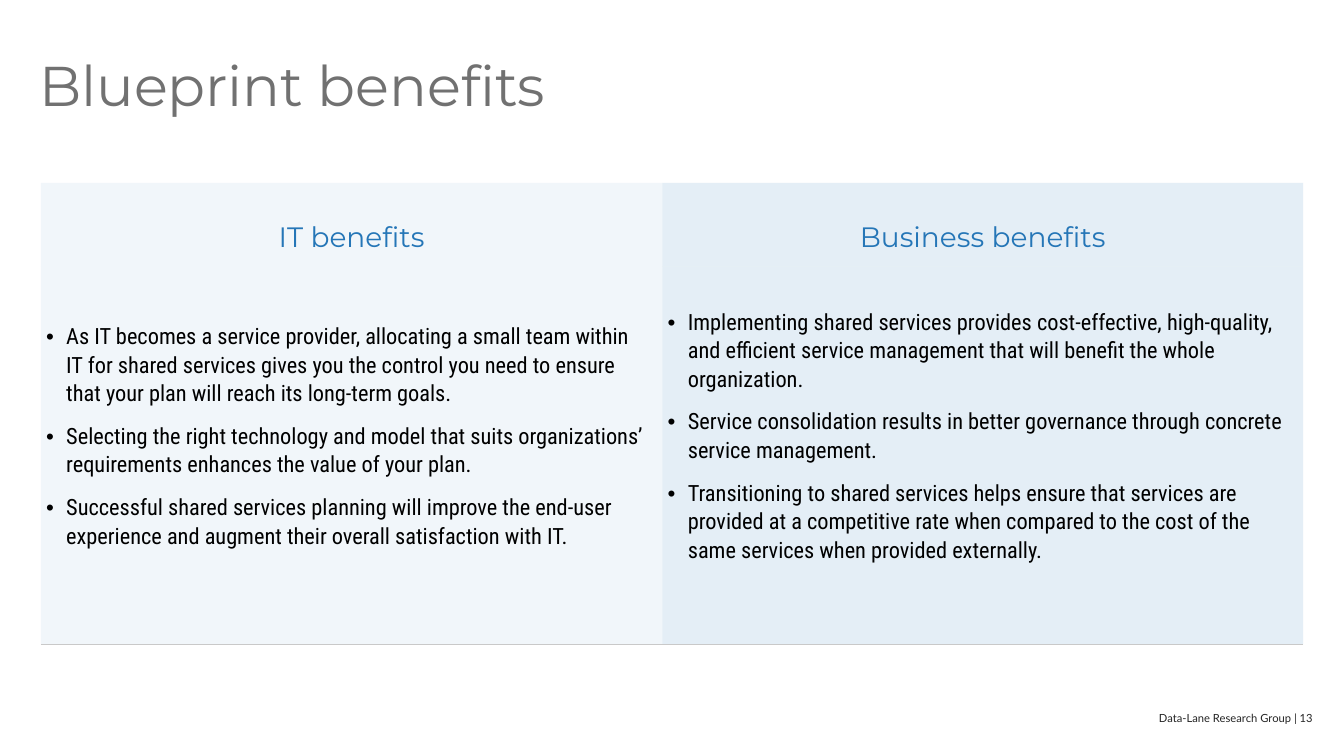
from lxml import etree
from pptx import Presentation
from pptx import util as u
from pptx.dml import color
from pptx.enum import text
from pptx.oxml import ns

TINT = "7CADD4"
COLUMNS = [
    ("IT benefits", 15.67, 10, [
        "As IT becomes a service provider, allocating a small team within IT for shared services gives you the control you need to ensure that your plan will reach its long-term goals.",
        "Selecting the right technology and model that suits organizations’ requirements enhances the value of your plan.",
        "Successful shared services planning will improve the end-user experience and augment their overall satisfaction with IT.",
    ]),
    ("Business benefits", 16.15, 20, [
        "Implementing shared services provides cost-effective, high-quality, and efficient service management that will benefit the whole organization.",
        "Service consolidation results in better governance through concrete service management.",
        "Transitioning to shared services helps ensure that services are provided at a competitive rate when compared to the cost of the same services when provided externally.",
    ]),
]


def paint(target, hex_code):
    target.rgb = color.RGBColor.from_string(hex_code)


def add_node(parent, tag, **attributes):
    return etree.SubElement(parent, ns.qn(tag), attributes)


def set_margins(target, left, top, right, bottom):
    target.margin_left, target.margin_top = u.Cm(left), u.Cm(top)
    target.margin_right, target.margin_bottom = u.Cm(right), u.Cm(bottom)


def write(para, words, font, size, hex_code):
    para.text = words
    for span in para.runs:
        span.font.name = font
        span.font.size = u.Pt(size)
        span.font.bold = False
        paint(span.font.color, hex_code)


def add_text(page, box, words, font, size, hex_code):
    frame = page.shapes.add_textbox(*map(u.Cm, box)).text_frame
    frame.word_wrap = True
    set_margins(frame, 0, 0, 0, 0)
    para = frame.paragraphs[0]
    write(para, words, font, size, hex_code)
    return para


def add_title(page, box):
    para = add_text(page, box, "Blueprint benefits", "Montserrat", 40, "717171")
    para.line_spacing = 0.9


def add_footer(page, box):
    para = add_text(page, box, "Data-Lane Research Group | 13", "Lato", 8, "242424")
    para.alignment = text.PP_ALIGN.RIGHT


def style_cell(cell, opacity, ruled):
    properties = cell._tc.get_or_add_tcPr()
    for side in "LRTB":
        edge = add_node(properties, f"a:ln{side}", w=str(u.Pt(0.5)))
        if ruled and side == "B":
            add_node(add_node(edge, "a:solidFill"), "a:srgbClr", val="C9C9C9")
        else:
            add_node(edge, "a:noFill")
    cell.fill.solid()
    paint(cell.fill.fore_color, TINT)
    tint = properties.find(ns.qn("a:solidFill")).find(ns.qn("a:srgbClr"))
    add_node(tint, "a:alpha", val=str(opacity * 1000))


def fill_heading(cell, heading):
    set_margins(cell, 0.3, 0.6, 0.3, 0.3)
    cell.vertical_anchor = text.MSO_ANCHOR.BOTTOM
    para = cell.text_frame.paragraphs[0]
    write(para, heading, "Montserrat", 20, "2576B7")
    para.alignment = text.PP_ALIGN.CENTER


def fill_benefits(cell, benefits):
    set_margins(cell, 0.13, 0.1, 0.3, 1.11)
    cell.vertical_anchor = text.MSO_ANCHOR.MIDDLE
    cell.text_frame.text = "\n".join(benefits)
    for para, benefit in zip(cell.text_frame.paragraphs, benefits):
        write(para, benefit, "Roboto Condensed", 16, "000000")
        para.line_spacing = 1.1
        para.space_before = u.Pt(10)
        properties = para._p.get_or_add_pPr()
        indent = u.Cm(0.51)
        properties.set("marL", str(indent))
        properties.set("indent", str(-indent))
        add_node(properties, "a:buFont", typeface="Arial")
        add_node(properties, "a:buChar", char="•")


def add_benefits(page, box):
    table = page.shapes.add_table(2, len(COLUMNS), *map(u.Cm, box)).table
    table.first_row = table.horz_banding = False
    heading_height = 2.1
    table.rows[0].height = u.Cm(heading_height)
    table.rows[1].height = u.Cm(box[3] - heading_height)
    for index, (heading, width, opacity, benefits) in enumerate(COLUMNS):
        table.columns[index].width = u.Cm(width)
        top, body = table.cell(0, index), table.cell(1, index)
        style_cell(top, opacity, False)
        style_cell(body, opacity, True)
        fill_heading(top, heading)
        fill_benefits(body, benefits)


def main():
    deck = Presentation()
    deck.slide_width, deck.slide_height = u.Cm(33.88), u.Cm(19.05)
    page = deck.slides.add_slide(deck.slide_layouts[6])
    add_footer(page, (23.55, 17.93, 9.55, 0.33))
    add_title(page, (0.99, 1.47, 23.47, 3.15))
    add_benefits(page, (1.03, 4.61, 31.82, 11.63))
    deck.save("out.pptx")


if __name__ == "__main__":
    main()
